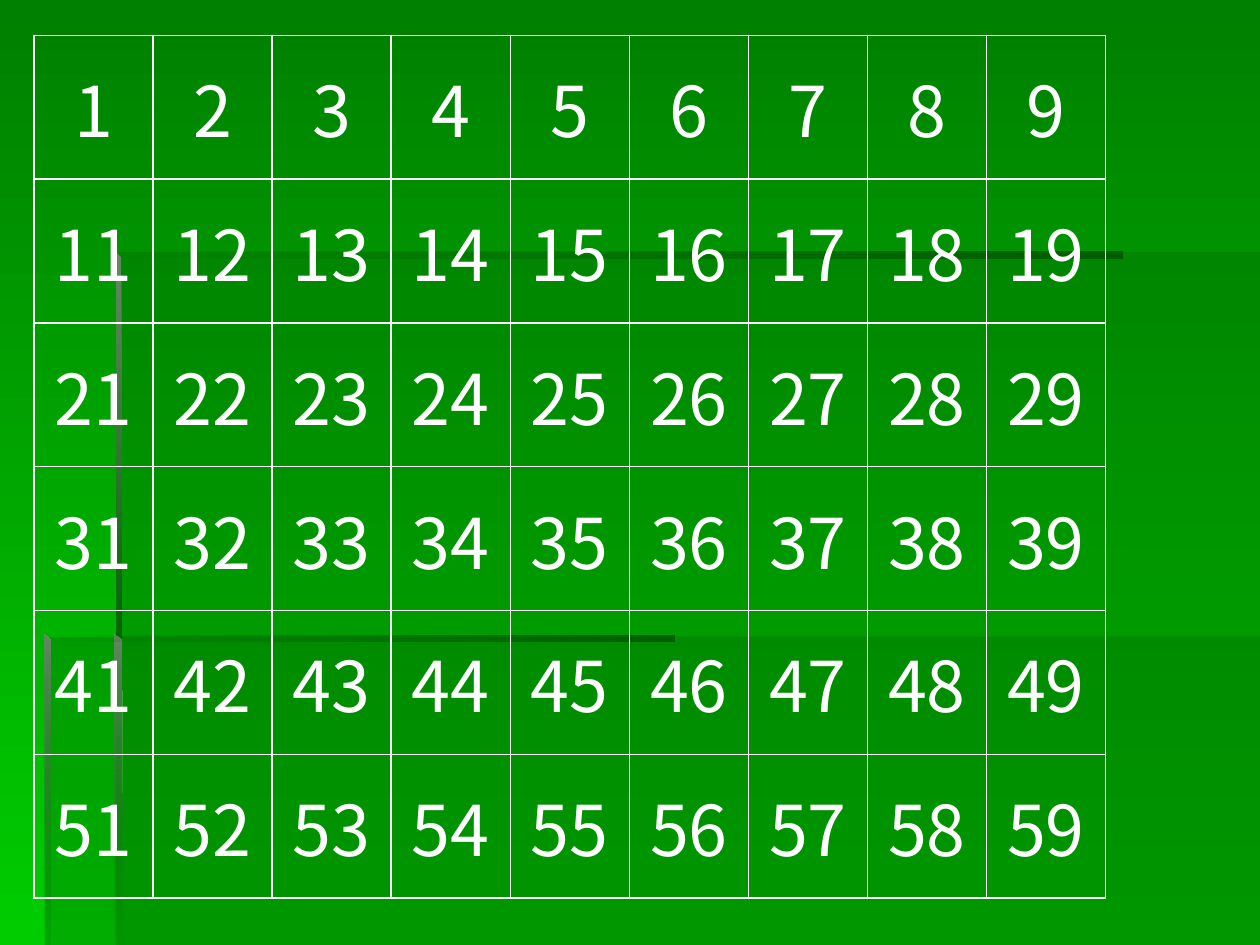
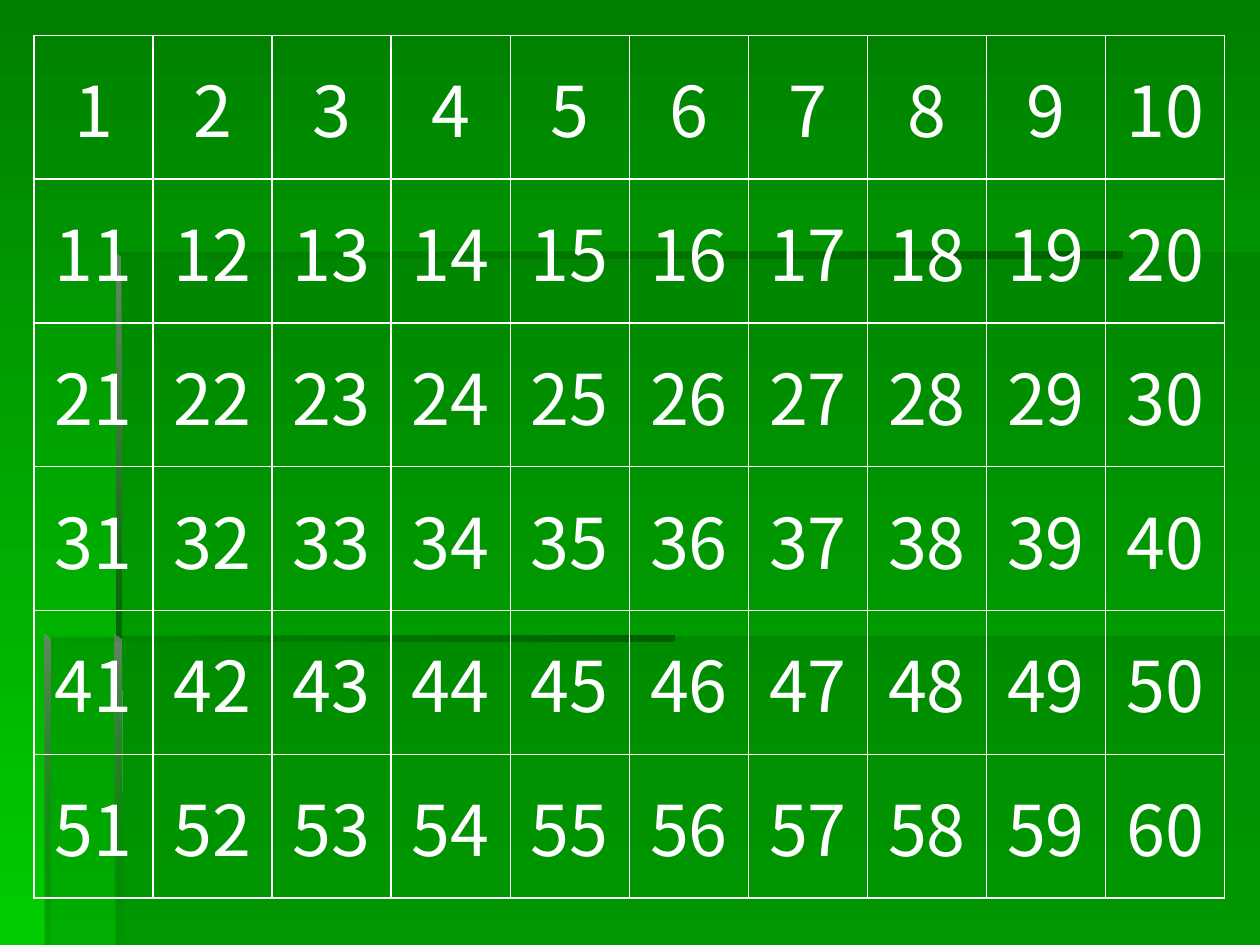
from dataclasses import dataclass

from lxml import etree
from pptx import Presentation
from pptx.dml.color import RGBColor
from pptx.enum import text
from pptx.oxml import ns
from pptx.util import Emu, Pt

# Content: each slide counts on by tens, showing the first columns of each ten
ROWS, STEP = 6, 10
SLIDE_COLUMNS = [9, 10]


@dataclass(frozen=True)
class Theme:
    font: str = "Noto Sans CJK JP"
    number_size: int = 40
    ink: str = "FFFFFF"
    border: int = 1
    top: str = "008000"
    bottom: str = "00CC00"
    shade: str = "006600"
    edge: str = "005E00"
    glint: str = "668666"


THEME = Theme()

# Geometry in px, 100 to the inch
PX = 9144
WIDTH, HEIGHT = 1000, 750
GRID_LEFT, GRID_TOP = 27, 28
FULL_GRID_WIDTH, GRID_HEIGHT = 945, 685
ACROSS, DOWN = 0, 90

# Backdrop parts: outline, (colour, opacity %) stops, gradient direction
PANEL = [(THEME.shade, 30)]
RIDGE = [(THEME.shade, 0), (THEME.edge, 100)]
BACKDROP = [
    ([(92, 505), (92, HEIGHT), (WIDTH, HEIGHT), (WIDTH, 505)], PANEL, None),
    ([(94, 506), (36, 506), (36, HEIGHT), (WIDTH, HEIGHT), (WIDTH, 200), (94, 200)],
     PANEL, None),
    ([(92, 200), (92, 205), (891, 205), (891, 200)], RIDGE, ACROSS),
    ([(92, 200), (92, 510), (97, 510), (96, 204)],
     [(THEME.glint, 100), (THEME.shade, 100)], DOWN),
    ([(91, HEIGHT), (97, HEIGHT), (96, 508), (91, 504)],
     [(THEME.glint, 100), (THEME.shade, 0)], DOWN),
    ([(35, 504), (35, 509), (535, 509), (535, 504)], RIDGE, ACROSS),
    ([(35, 504), (35, HEIGHT), (40, HEIGHT), (40, 509)],
     [(THEME.glint, 100), (THEME.shade, 10)], DOWN),
]


def px(n):
    return Emu(round(n * PX))


def rgb(color):
    return RGBColor.from_string(color)


def paint(fill, colors, angle=None):
    """Fill with one colour, or a two-colour gradient at a clockwise angle."""
    if len(colors) == 1:
        fill.solid()
        fill.fore_color.rgb = rgb(colors[0])
        return
    fill.gradient()
    fill.gradient_angle = -angle % 360
    for stop, color in zip(fill.gradient_stops, colors):
        stop.color.rgb = rgb(color)


def set_opacity(sp, percents):
    for clr, percent in zip(sp.element.xpath("./p:spPr//a:srgbClr"), percents):
        if percent < 100:
            etree.SubElement(clr, ns.qn("a:alpha"), val=str(percent * 1000))


def write(cell, content, *, size, color, font, align=text.PP_ALIGN.CENTER,
          anchor=text.MSO_ANCHOR.MIDDLE):
    cell.vertical_anchor = anchor
    p = cell.text_frame.paragraphs[0]
    p.alignment = align
    r = p.add_run()
    r.text = content
    r.font.size, r.font.name = Pt(size), font
    r.font.color.rgb = rgb(color)


def add_borders(cell, color, width):
    tc_pr = cell._tc.get_or_add_tcPr()
    for i, side in enumerate(("lnL", "lnR", "lnT", "lnB")):
        ln = etree.Element(ns.qn(f"a:{side}"), w=str(Pt(width)))
        solid = etree.SubElement(ln, ns.qn("a:solidFill"))
        etree.SubElement(solid, ns.qn("a:srgbClr"), val=color)
        tc_pr.insert(i, ln)


def add_backdrop(master, slide):
    """Draw the backdrop group on a slide, then move it to the master."""
    paint(master.background.fill, [THEME.top, THEME.bottom], DOWN)
    group = slide.shapes.add_group_shape()
    for points, stops, angle in BACKDROP:
        builder = group.shapes.build_freeform(*points[0], scale=PX)
        builder.add_line_segments(points[1:], close=True)
        sp = builder.convert_to_shape()
        colors, percents = zip(*stops)
        paint(sp.fill, colors, angle)
        set_opacity(sp, percents)
        sp.line.fill.background()
        sp.shadow.inherit = False
    tree = master.shapes.element
    tree.insert(2, group.element)
    # Keep shape ids unique on the master
    for number, props in enumerate(tree.iter(ns.qn("p:cNvPr")), 1):
        props.set("id", str(number))


def add_number_grid(slide, columns):
    width = FULL_GRID_WIDTH * columns / STEP
    table = slide.shapes.add_table(ROWS, columns, px(GRID_LEFT), px(GRID_TOP),
                                   px(width), px(GRID_HEIGHT)).table
    table.first_row = table.horz_banding = False
    for row in range(ROWS):
        for col in range(columns):
            cell = table.cell(row, col)
            cell.fill.background()
            add_borders(cell, THEME.ink, THEME.border)
            write(cell, str(row * STEP + col + 1), size=THEME.number_size,
                  color=THEME.ink, font=THEME.font)


def main():
    prs = Presentation()
    prs.slide_width, prs.slide_height = px(WIDTH), px(HEIGHT)
    blank = prs.slide_layouts[6]
    slides = [prs.slides.add_slide(blank) for _ in SLIDE_COLUMNS]
    add_backdrop(prs.slide_master, slides[0])
    for slide, columns in zip(slides, SLIDE_COLUMNS):
        add_number_grid(slide, columns)
    prs.save("out.pptx")


if __name__ == "__main__":
    main()
